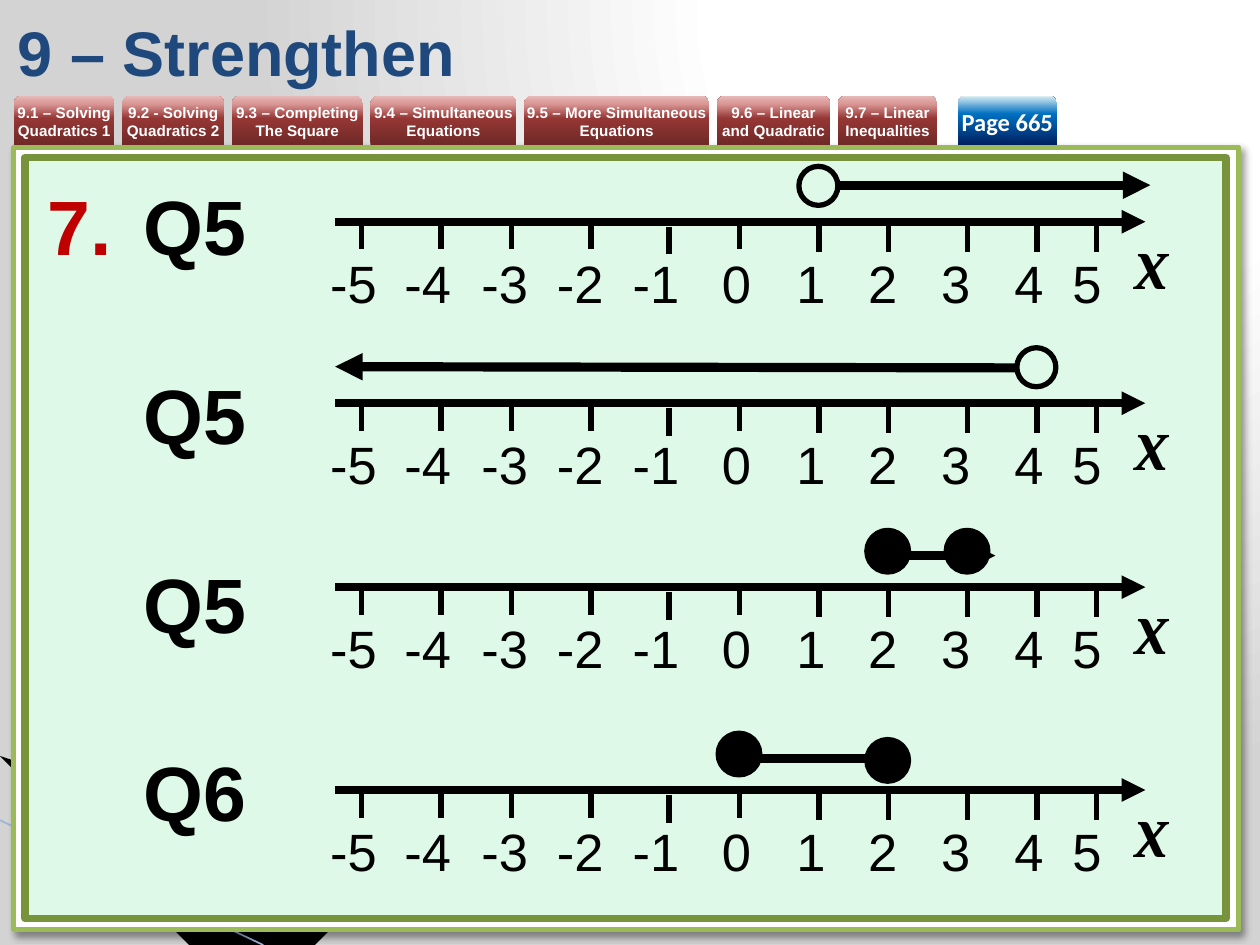
from lxml import etree
from pptx import Presentation
from pptx.dml.color import RGBColor
from pptx.enum import shapes, text
from pptx.oxml.ns import qn
from pptx.util import Inches, Pt

COLORS = {
    "black": "000000", "white": "FFFFFF", "navy": "1F497D", "number": "C00000",
    "frame": "9BBB59", "board": "DFF9E8", "board_edge": "77933C",
    "swoosh": "A7B9DB", "swoosh_edge": "9EB3D6",
}
BACKDROP = [(0, "FFFFFF"), (40, "FFFFFF"), (100, "D3D3D3")]
RED_TAB = [(0, "6F2927"), (54, "953735"), (83, "D99694"), (100, "E6B9B8")]
BLUE_TAB = [(0, "002060"), (63, "0070C0"), (100, "DBEEF4")]
LESSONS = [
    ("9.1 – Solving Quadratics 1", 0.8),
    ("9.2 - Solving Quadratics 2", 0.81),
    ("9.3 – Completing The Square", 1.04),
    ("9.4 – Simultaneous Equations", 1.16),
    ("9.5 – More Simultaneous Equations", 1.47),
    ("9.6 – Linear and Quadratic", 0.9),
    ("9.7 – Linear Inequalities", 0.79),
]
QUESTIONS = ["Q5", "Q5", "Q5", "Q6"]
TICKS = [
    (2.87, 0), (3.5, 0), (4.06, 0), (4.69, 0), (5.31, 0.04), (5.87, 0),
    (6.5, 0.02), (7.05, 0.02), (7.68, 0.02), (8.23, 0.02), (8.7, 0.02),
]
LABEL_STOPS = [0.59, 1.2, 1.8, 2.4, 3.11, 3.7, 4.27, 4.85, 5.43, 5.89]
NUMBER_LINES = [
    {"axis": 1.76, "range": (6.65, 1.47, 9.13, 1.47), "open": [(6.34, 1.32)], "closed": []},
    {"axis": 3.2, "range": (8.07, 2.92, 2.66, 2.91), "open": [(8.07, 2.76)], "closed": []},
    {"axis": 4.66, "range": (6.97, 4.41, 7.9, 4.41), "open": [],
     "closed": [(6.89, 4.22), (7.52, 4.22)]},
    {"axis": 6.27, "range": (5.87, 6.02, 7.21, 6.02), "open": [],
     "closed": [(5.71, 5.83), (6.89, 5.88)]},
]


def rgb(name):
    return RGBColor.from_string(COLORS[name])


def child(parent, tag, **attributes):
    return etree.SubElement(parent, qn(tag), {k: str(v) for k, v in attributes.items()})


def set_gradient(fill, owner, stops, radial=False):
    fill.gradient()
    gradient = owner.find(".//" + qn("a:gradFill"))
    for old in list(gradient):
        gradient.remove(old)
    stop_list = child(gradient, "a:gsLst")
    for position, color in stops:
        child(child(stop_list, "a:gs", pos=position * 1000), "a:srgbClr", val=color)
    if radial:
        focus = child(gradient, "a:path", path="circle")
        child(focus, "a:fillToRect", l=65000, b=98000)
    else:
        child(gradient, "a:lin", ang=16200000, scaled=0)


def add_run(paragraph, words, size, font, color, bold=False, italic=False):
    run = paragraph.add_run()
    run.text = words
    run.font.size, run.font.name = Pt(size), font
    run.font.bold, run.font.italic = bold, italic
    run.font.color.rgb = rgb(color)


def add_form(parent, kind, box, fill=None, edge=None, width=0):
    form = parent.add_shape(kind, *map(Inches, box))
    form.shadow.inherit = False
    if fill:
        form.fill.solid()
        form.fill.fore_color.rgb = rgb(fill)
    else:
        form.fill.background()
    if edge:
        form.line.color.rgb = rgb(edge)
        form.line.width = Pt(width)
    else:
        form.line.fill.background()
    return form


def add_line(parent, ends, width, color="black", arrow=False):
    line = parent.add_connector(shapes.MSO_CONNECTOR.STRAIGHT, *map(Inches, ends))
    line.line.color.rgb = rgb(color)
    line.line.width = Pt(width)
    if arrow:
        child(line.line._get_or_add_ln(), "a:tailEnd", type="triangle")
    child(line._element.spPr, "a:effectLst")


def add_swoosh(slide, points, color, opacity=100):
    builder = slide.shapes.build_freeform(*points[0], scale=Inches(1))
    builder.add_line_segments(points[1:], close=True)
    swoosh = builder.convert_to_shape()
    swoosh.shadow.inherit = False
    swoosh.fill.solid()
    swoosh.fill.fore_color.rgb = rgb(color)
    swoosh.line.fill.background()
    tint = swoosh._element.spPr.find(".//" + qn("a:srgbClr"))
    child(tint, "a:alpha", val=opacity * 1000)


def add_tab(slide, left, width, words, stops, size, font, spacing=None):
    tab = add_form(slide.shapes, shapes.MSO_SHAPE.ROUND_2_SAME_RECTANGLE,
                   (left, 0.76, width, 0.39))
    set_gradient(tab.fill, tab._element.spPr, stops)
    frame = tab.text_frame
    frame.margin_left = frame.margin_right = frame.margin_top = frame.margin_bottom = 0
    frame.vertical_anchor = text.MSO_ANCHOR.MIDDLE
    frame.word_wrap = True
    caption = frame.paragraphs[0]
    caption.alignment = text.PP_ALIGN.CENTER
    if spacing:
        caption.line_spacing = Pt(spacing)
    add_run(caption, words, size, font, "white", bold=True)


def add_board(slide):
    add_swoosh(slide, [(0, 6.5), (3.49, 7.5), (2.59, 7.5), (0, 6.49)], "swoosh", 40)
    add_swoosh(slide, [(0, 6.48), (2.56, 7.49), (2.02, 7.5), (0.01, 6.49)], "black")
    add_line(slide.shapes, (0, 6.51, 2.09, 7.5), 0.95, "swoosh_edge")
    rectangle = shapes.MSO_SHAPE.RECTANGLE
    frame = add_form(slide.shapes, rectangle, (0.11, 1.17, 9.72, 6.21), "white", "frame", 3)
    effects = frame._element.spPr.find(qn("a:effectLst"))
    shadow = child(effects, "a:outerShdw", blurRad=Pt(4), dist=Pt(3),
                   dir=2700000, algn="tl", rotWithShape=0)
    child(child(shadow, "a:srgbClr", val=COLORS["black"]), "a:alpha", val=40000)
    add_form(slide.shapes, rectangle, (0.2, 1.25, 9.53, 6.04), "board", "board_edge", 4.33)


def add_questions(slide):
    frame = slide.shapes.add_textbox(*map(Inches, (0.28, 1.37, 2.2, 5.28))).text_frame
    frame.word_wrap = True
    for index, question in enumerate(QUESTIONS):
        paragraph = frame.paragraphs[0] if index == 0 else frame.add_paragraph()
        paragraph.space_after = Pt(55)
        properties = paragraph._p.get_or_add_pPr()
        properties.set("marL", str(Inches(0.76)))
        properties.set("indent", str(Inches(0 if index else -0.76)))
        if index == 0:
            child(child(properties, "a:buClr"), "a:srgbClr", val=COLORS["number"])
            child(properties, "a:buFont", typeface="+mj-lt")
            child(properties, "a:buAutoNum", type="arabicPeriod", startAt=7)
        add_run(paragraph, question, 44, "Arial", "black", bold=True)


def add_number_line(slide, row):
    axis = row["axis"]
    scale = slide.shapes.add_group_shape().shapes
    add_line(scale, (2.66, axis, 9.09, axis), 4.5, arrow=True)
    for x, drop in TICKS:
        add_line(scale, (x, axis + drop, x, axis + drop + 0.22), 3)

    labels = scale.add_textbox(*map(Inches, (2.4, axis + 0.18, 6.51, 0.61))).text_frame
    labels.word_wrap = True
    labels.margin_left, labels.margin_right = Inches(0.22), 0
    paragraph = labels.paragraphs[0]
    stops = child(paragraph._p.get_or_add_pPr(), "a:tabLst")
    for stop in LABEL_STOPS:
        child(stops, "a:tab", pos=Inches(stop), algn="l")
    add_run(paragraph, "\t".join(map(str, range(-5, 6))), 30, "Arial", "black")

    variable = scale.add_textbox(*map(Inches, (8.91, axis + 0.07, 0.58, 0.61))).text_frame
    variable.word_wrap = False
    add_run(variable.paragraphs[0], "X", 30, "Cambria", "black", bold=True, italic=True)

    add_line(slide.shapes, row["range"], 5.25, arrow=True)
    for ends, fill, width in ((row["open"], None, 3), (row["closed"], "black", 4.5)):
        for left, top in ends:
            add_form(slide.shapes, shapes.MSO_SHAPE.OVAL, (left, top, 0.31, 0.31),
                     fill, "black", width)


def main():
    deck = Presentation()
    deck.slide_width, deck.slide_height = Inches(10), Inches(7.5)
    slide = deck.slides.add_slide(deck.slide_layouts[5])
    set_gradient(slide.background.fill, slide.element, BACKDROP, radial=True)
    add_board(slide)

    title = slide.shapes.title
    title.left, title.top, title.width, title.height = map(Inches, (0.04, 0.05, 8.43, 0.71))
    title.text_frame.vertical_anchor = text.MSO_ANCHOR.MIDDLE
    heading = title.text_frame.paragraphs[0]
    heading.alignment = text.PP_ALIGN.LEFT
    add_run(heading, "9 – Strengthen", 36, "Arial", "navy", bold=True)

    left = 0.11
    for lesson, width in LESSONS:
        add_tab(slide, left, width, lesson, RED_TAB, 8.7, "Arial", 10)
        left += width + 0.06
    add_tab(slide, 7.6, 0.79, "Page 665", BLUE_TAB, 14, "Calibri")

    add_questions(slide)
    for row in NUMBER_LINES:
        add_number_line(slide, row)
    deck.save("out.pptx")


if __name__ == "__main__":
    main()
